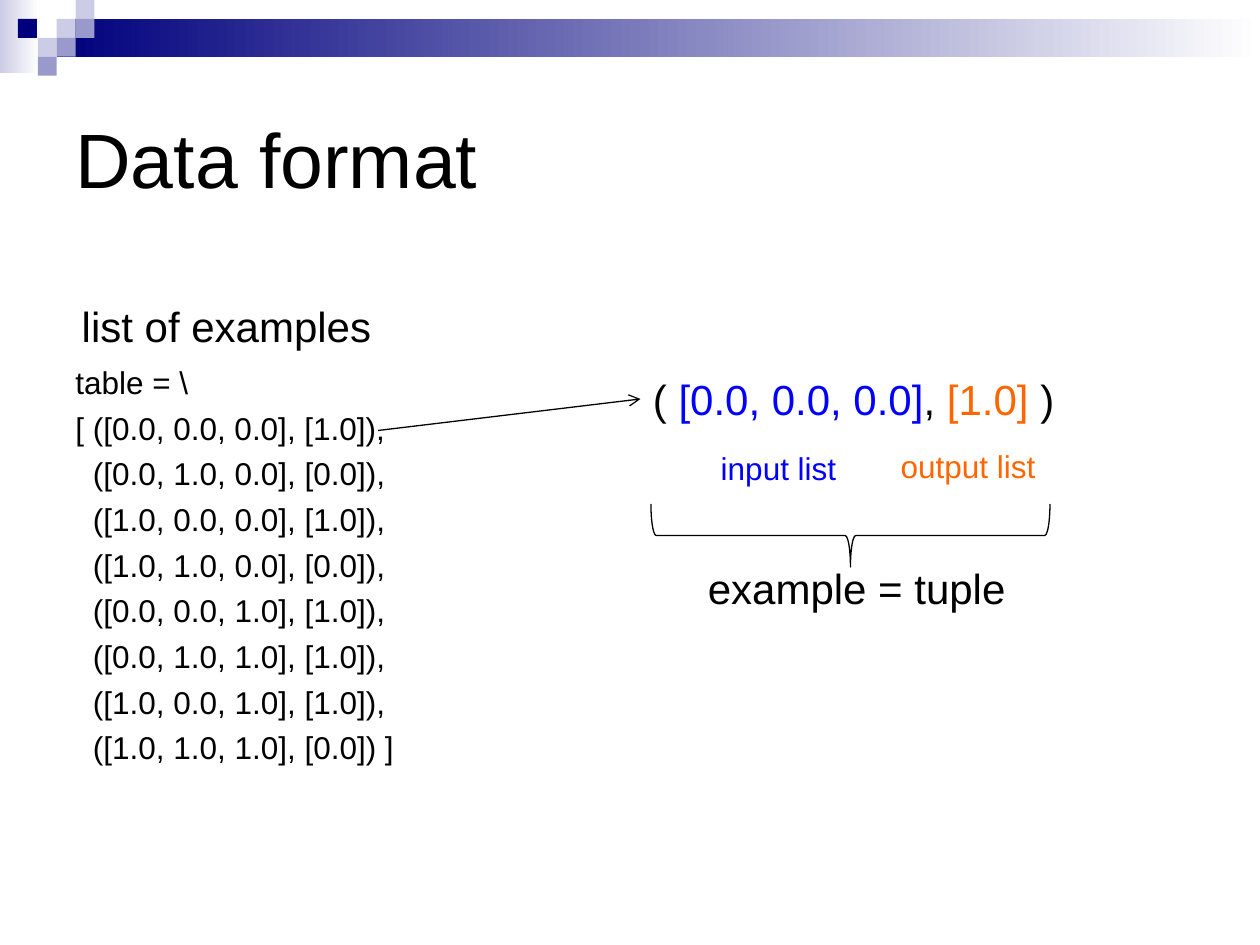
from lxml import etree
from pptx import Presentation
from pptx.dml.color import RGBColor
from pptx.enum.shapes import MSO_CONNECTOR, MSO_SHAPE
from pptx.enum.text import MSO_ANCHOR
from pptx.oxml.ns import qn
from pptx.util import Pt

RECT, BRACE = MSO_SHAPE.RECTANGLE, MSO_SHAPE.LEFT_BRACE
STRAIGHT = MSO_CONNECTOR.STRAIGHT
TOP, MIDDLE = MSO_ANCHOR.TOP, MSO_ANCHOR.MIDDLE

FONT = "Arial"
COLORS = {"black": "000000", "white": "FFFFFF", "navy": "00007D", "pale": "CCCCE6",
          "lilac": "9999CC", "input": "0000FF", "output": "FF6600"}

TITLE = "Data format"
TABLE_HEAD = "table = \\"
ROWS = [
    "[ ([0.0, 0.0, 0.0], [1.0]),",
    "([0.0, 1.0, 0.0], [0.0]),",
    "([1.0, 0.0, 0.0], [1.0]),",
    "([1.0, 1.0, 0.0], [0.0]),",
    "([0.0, 0.0, 1.0], [1.0]),",
    "([0.0, 1.0, 1.0], [1.0]),",
    "([1.0, 0.0, 1.0], [1.0]),",
    "([1.0, 1.0, 1.0], [0.0]) ]",
]
EXAMPLE = [("( ", "black"), ("[0.0, 0.0, 0.0]", "input"), (", ", "black"),
           ("[1.0] ", "output"), (")", "black")]
# (runs, size, box)
LABELS = [
    ([("list of examples", "black")], 24, (39.6, 168, 188.6, 36)),
    (EXAMPLE, 24, (366, 210, 246, 36)),
    ([("input list", "input")], 18, (404.8, 252.8, 81.4, 28.8)),
    ([("output list", "output")], 18, (507.6, 252, 92.2, 28.8)),
    ([("example = tuple", "black")], 24, (397.4, 318, 186.5, 36)),
]
# (box, start colour), each fading to white
BANDS = [((0, 0, 22.3, 41.8), "pale"), ((32.4, 10.8, 687.6, 21.6), "navy")]
SQUARE = 10.8
# (column, row, colour) in squares
SQUARES = [(3, 1, "pale"), (4, 0, "pale"), (4, 1, "lilac"), (2, 2, "pale"),
           (0.95, 1, "navy"), (3, 2, "lilac"), (2, 3, "lilac")]
ROW_INDENT = 10


def rgb(name):
    return RGBColor.from_string(COLORS[name])


def points(box):
    return [Pt(v) for v in box]


def add_rect(slide, box):
    sp = slide.shapes.add_shape(RECT, *points(box))
    sp.shadow.inherit = False
    sp.line.fill.background()
    return sp


def add_text(slide, box, paragraphs, size, wrap=True, anchor=TOP):
    """Add a text box; each paragraph is a list of (text, colour) runs."""
    tf = slide.shapes.add_textbox(*points(box)).text_frame
    tf.word_wrap = wrap
    tf.vertical_anchor = anchor
    for i, runs in enumerate(paragraphs):
        p = tf.add_paragraph() if i else tf.paragraphs[0]
        p.font.size, p.font.name = Pt(size), FONT
        for text, color in runs:
            r = p.add_run()
            r.text = text
            r.font.color.rgb = rgb(color)
    return tf


def add_banner(slide):
    for box, color in BANDS:
        fill = add_rect(slide, box).fill
        fill.gradient()
        fill.gradient_angle = 0
        for stop, name in zip(fill.gradient_stops, (color, "white")):
            stop.color.rgb = rgb(name)
    for col, row, color in SQUARES:
        fill = add_rect(slide, (col * SQUARE, row * SQUARE, SQUARE, SQUARE)).fill
        fill.solid()
        fill.fore_color.rgb = rgb(color)


def add_table_listing(slide):
    lines = [[(text, "black")] for text in [TABLE_HEAD] + ROWS]
    tf = add_text(slide, (36, 203.8, 203.8, 257.8), lines, 18)
    for i, p in enumerate(tf.paragraphs):
        p.space_before = Pt(4.5)
        if i > 1:
            p._p.get_or_add_pPr().set("marL", str(Pt(ROW_INDENT)))


def add_arrow(slide, start, end):
    line = slide.shapes.add_connector(STRAIGHT, *points(start + end))
    line.line.color.rgb = rgb("black")
    line.line.width = Pt(0.75)
    etree.SubElement(line.line._get_or_add_ln(), qn("a:tailEnd"), type="arrow")
    etree.SubElement(line._element.spPr, qn("a:effectLst"))


def add_brace(slide, box):
    sp = slide.shapes.add_shape(BRACE, *points(box))
    sp.rotation = 270
    sp.shadow.inherit = False
    sp.fill.background()
    sp.line.color.rgb = rgb("black")
    sp.line.width = Pt(0.75)


def main():
    prs = Presentation()
    prs.slide_width, prs.slide_height = Pt(720), Pt(540)
    slide = prs.slides.add_slide(prs.slide_layouts[6])
    add_banner(slide)
    add_text(slide, (36, 36, 648, 108), [[(TITLE, "black")]], 44, anchor=MIDDLE)
    add_table_listing(slide)
    add_arrow(slide, (216, 246), (366, 228))
    for runs, size, box in LABELS:
        add_text(slide, box, [runs], size, wrap=False)
    add_brace(slide, (468, 192, 36, 228))
    prs.save("out.pptx")


if __name__ == "__main__":
    main()
